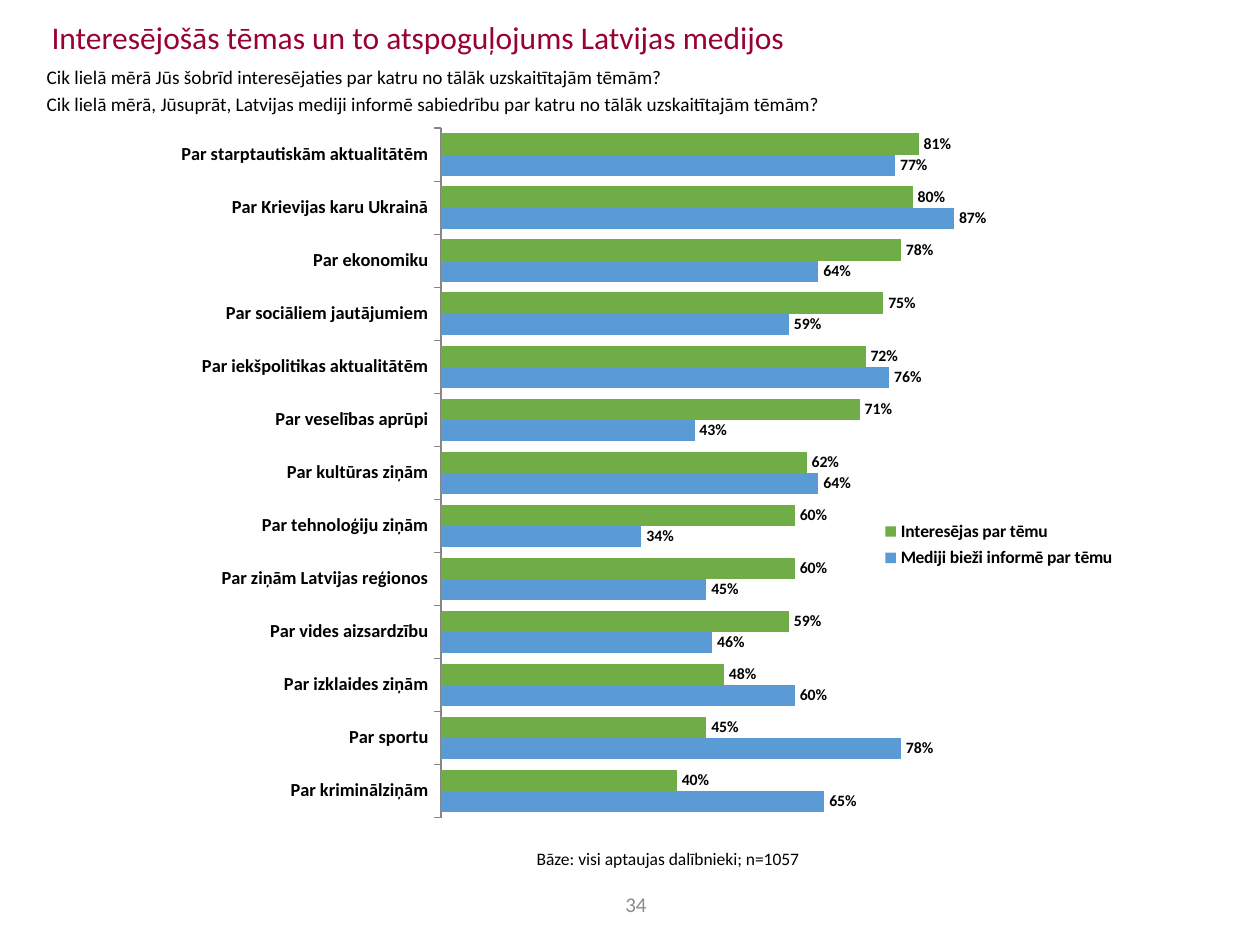
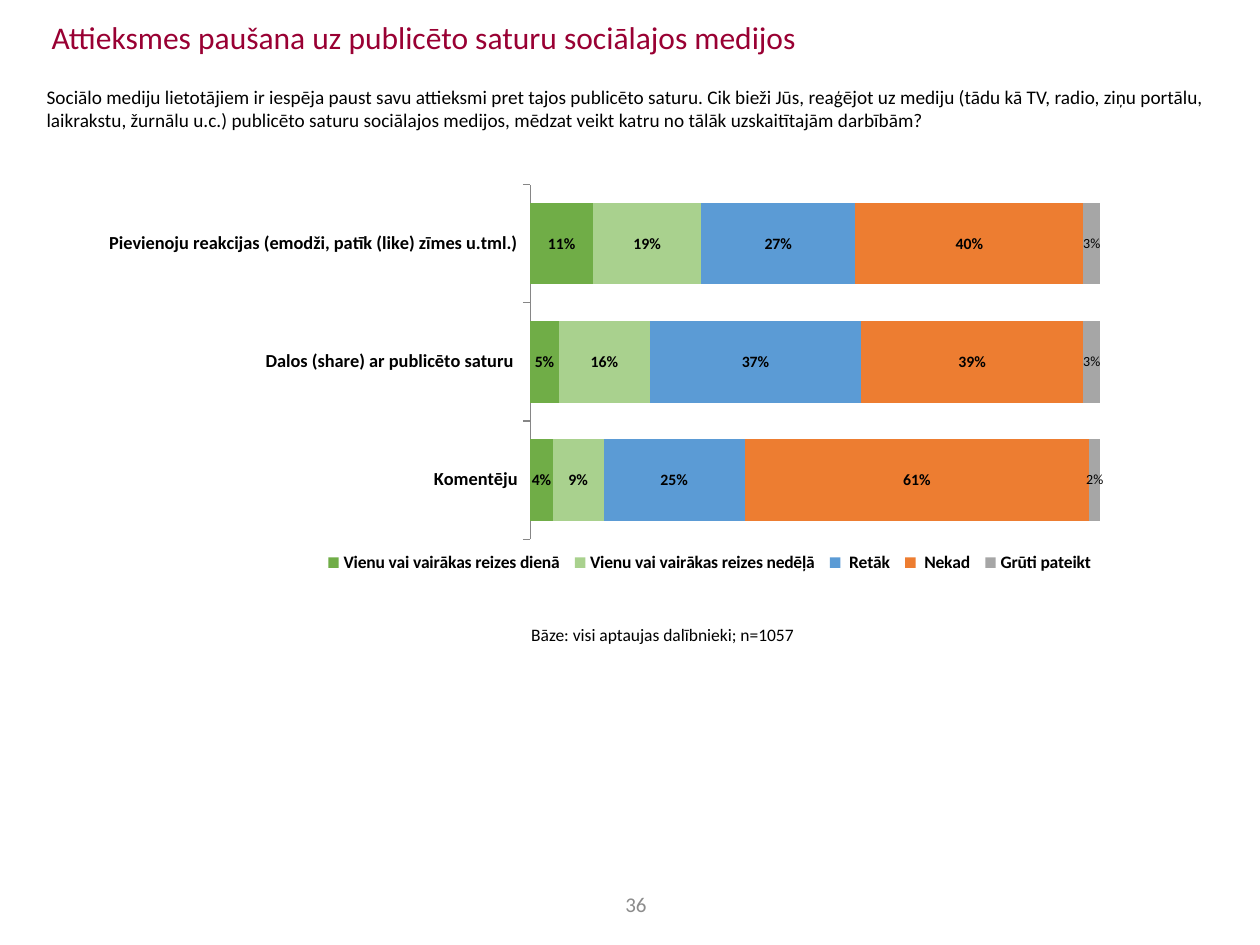
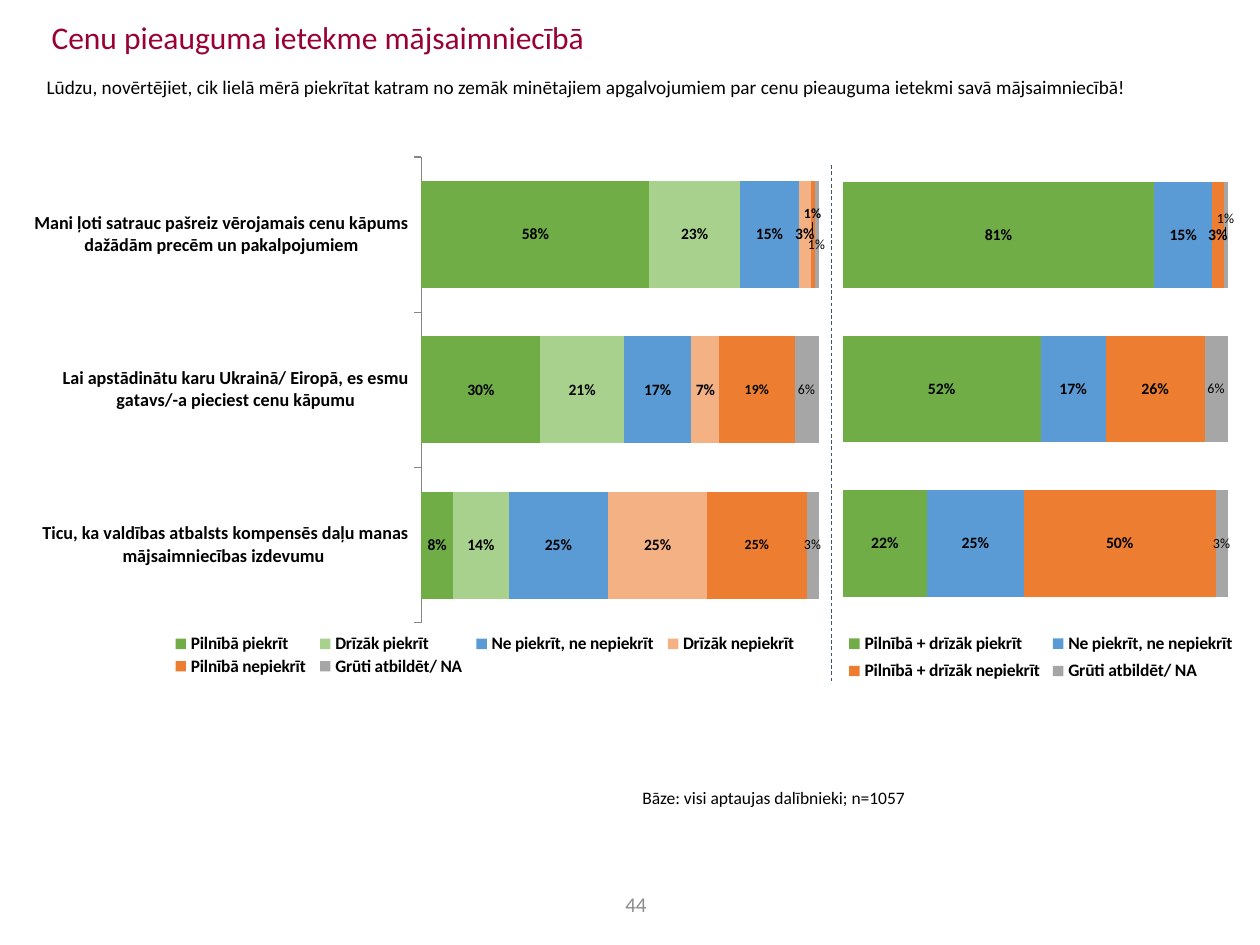
import pptx
import pptx.chart.data
import pptx.dml.color
import pptx.enum.chart
import pptx.enum.dml
import pptx.enum.shapes
import pptx.enum.text
import pptx.oxml
import pptx.oxml.ns
import pptx.util

Cm, Pt = pptx.util.Cm, pptx.util.Pt
Anchor = pptx.enum.text.MSO_ANCHOR
ChartType = pptx.enum.chart.XL_CHART_TYPE
LabelPosition = pptx.enum.chart.XL_LABEL_POSITION

FONT = "Calibri"
BLACK, CRIMSON, GREY_TEXT, AXIS, SLATE = "000000", "990033", "8C8C8C", "868686", "44546A"
GREEN, LIGHT_GREEN, BLUE = "70AD47", "A9D18E", "5B9BD5"
ORANGE, LIGHT_ORANGE, GREY = "ED7D31", "F4B183", "A6A6A6"
BASE = "Bāze: visi aptaujas dalībnieki; n=1057"

# Places are left, top, width, height in cm; plot and legend are shares of the chart.
# Series: name, colour, values in percent, then options for its labels.
SMALL = {"size": 8, "bold": False}

TOPICS = {
    "place": (2.57, 2.57, 20.19, 14.07),
    "plot": (0.313, 0, 0.589, 0.989),
    "legend": (0.745, 0.555, 0.25, 0.085),
    "stacked": False,
    "categories": [
        "Par kriminālziņām", "Par sportu", "Par izklaides ziņām", "Par vides aizsardzību",
        "Par ziņām Latvijas reģionos", "Par tehnoloģiju ziņām", "Par kultūras ziņām",
        "Par veselības aprūpi", "Par iekšpolitikas aktualitātēm", "Par sociāliem jautājumiem",
        "Par ekonomiku", "Par Krievijas karu Ukrainā", "Par starptautiskām aktualitātēm",
    ],
    "series": [
        ("Mediji bieži informē par tēmu", BLUE,
         [65, 78, 60, 46, 45, 34, 64, 43, 76, 59, 64, 87, 77], {}),
        ("Interesējas par tēmu", GREEN,
         [40, 45, 48, 59, 60, 60, 62, 71, 72, 75, 78, 80, 81], {}),
    ],
}
REACTIONS = {
    "place": (1.98, 3.71, 20.27, 8.1),
    "plot": (0.431, 0, 0.569, 0.884),
    "legend": (0.22, 0.91, 0.78, 0.065),
    "categories": [
        "Komentēju",
        "Dalos (share) ar publicēto saturu ",
        "Pievienoju reakcijas (emodži, patīk (like) zīmes u.tml.)",
    ],
    "series": [
        ("Vienu vai vairākas reizes dienā", GREEN, [4, 5, 11], {}),
        ("Vienu vai vairākas reizes nedēļā", LIGHT_GREEN, [9, 16, 19], {}),
        (" Retāk", BLUE, [25, 37, 27], {}),
        (" Nekad", ORANGE, [61, 39, 40], {}),
        ("Grūti pateikt", GREY, [2, 3, 3], SMALL),
    ],
}
PRICES = {
    "place": (0.69, 3.15, 15.95, 10.64),
    "plot": (0.491, 0, 0.509, 0.884),
    "legend": (0.165, 0.9, 0.815, 0.09),
    "categories": [
        "Ticu, ka valdības atbalsts kompensēs daļu manas mājsaimniecības izdevumu ",
        "Lai apstādinātu karu Ukrainā/ Eiropā, es esmu gatavs/-a pieciest cenu kāpumu",
        "Mani ļoti satrauc pašreiz vērojamais cenu kāpums dažādām precēm un pakalpojumiem",
    ],
    "series": [
        ("Pilnībā piekrīt", GREEN, [8, 30, 58], {}),
        ("Drīzāk piekrīt", LIGHT_GREEN, [14, 21, 23], {}),
        ("Ne piekrīt, ne nepiekrīt", BLUE, [25, 17, 15], {}),
        ("Drīzāk nepiekrīt", LIGHT_ORANGE, [25, 7, 3], {}),
        ("Pilnībā nepiekrīt", ORANGE, [25, 19, 1], {"size": 8, "last_shift": -0.04}),
        ("Grūti atbildēt/ NA", GREY, [3, 6, 1], {**SMALL, "last_shift": 0.02}),
    ],
}
PRICE_TOTALS = {
    "place": (16.89, 3.18, 8.1, 10.92),
    "plot": (0.012, 0, 0.958, 0.855),
    "legend": (0.01, 0.865, 0.99, 0.115),
    "show_categories": False,
    "categories": ["1", "2", "3"],
    "series": [
        ("Pilnībā + drīzāk piekrīt", GREEN, [22, 52, 81], {}),
        ("Ne piekrīt, ne nepiekrīt", BLUE, [25, 17, 15], {}),
        ("Pilnībā + drīzāk nepiekrīt", ORANGE, [50, 26, 3], {}),
        ("Grūti atbildēt/ NA", GREY, [3, 6, 1], {**SMALL, "last_shift": -0.03}),
    ],
}
PAGES = [
    {
        "number": "34",
        "title": "Interesējošās tēmas un to atspoguļojums Latvijas medijos",
        "question": "Cik lielā mērā Jūs šobrīd interesējaties par katru no tālāk uzskaitītajām tēmām?\n"
                    "Cik lielā mērā, Jūsuprāt, Latvijas mediji informē sabiedrību par katru "
                    "no tālāk uzskaitītajām tēmām?",
        "question_top": 1.19,
        "base_at": (10.57, 16.97),
        "charts": [TOPICS],
    },
    {
        "number": "36",
        "title": "Attieksmes paušana uz publicēto saturu sociālajos medijos",
        "question": "Sociālo mediju lietotājiem ir iespēja paust savu attieksmi pret tajos publicēto "
                    "saturu. Cik bieži Jūs, reaģējot uz mediju (tādu kā TV, radio, ziņu portālu, "
                    "laikrakstu, žurnālu u.c.) publicēto saturu sociālajos medijos, mēdzat veikt "
                    "katru no tālāk uzskaitītajām darbībām?",
        "question_top": 1.6,
        "base_at": (10.46, 12.45),
        "charts": [REACTIONS],
    },
    {
        "number": "44",
        "title": "Cenu pieauguma ietekme mājsaimniecībā",
        "question": "Lūdzu, novērtējiet, cik lielā mērā piekrītat katram no zemāk minētajiem "
                    "apgalvojumiem par cenu pieauguma ietekmi savā mājsaimniecībā!",
        "question_top": 1.4,
        "base_at": (12.7, 15.75),
        "charts": [PRICES, PRICE_TOTALS],
        "divider": (16.76, 3.33, 16.76, 13.77),
    },
]


def color(value):
    return pptx.dml.color.RGBColor.from_string(value)


def set_font(font, size, bold=False, fill=BLACK):
    font.name, font.size, font.bold = FONT, Pt(size), bold
    font.color.rgb = color(fill)


def add_text(page, text, place, size, fill=BLACK, anchor=Anchor.TOP, align=None, wrap=True):
    """Add a text box with one paragraph for each line of the text."""
    frame = page.shapes.add_textbox(*map(Cm, place)).text_frame
    frame.word_wrap = wrap
    frame.vertical_anchor = anchor
    frame.text = text
    for index, para in enumerate(frame.paragraphs):
        para.alignment = align
        para.space_before = Pt(2.2 if index else 0)
        set_font(para.font, size, fill=fill)


def add_layout(parent, index, **values):
    """Insert a manual layout as the child at the index."""
    for old in parent.findall(pptx.oxml.ns.qn("c:layout")):
        parent.remove(old)
    items = "".join(f'<c:{name} val="{value}"/>' for name, value in values.items())
    parent.insert(index, pptx.oxml.parse_xml(
        f'<c:layout {pptx.oxml.ns.nsdecls("c")}><c:manualLayout>{items}'
        "</c:manualLayout></c:layout>"))


def place_inside_chart(parent, index, area, **target):
    left, top, width, height = area
    add_layout(parent, index, **target, xMode="edge", yMode="edge",
               x=left, y=top, w=width, h=height)


def format_series(series, fill, position, size=9, bold=True, last_shift=None):
    """Colour a series and label it; last_shift moves the last label up or down."""
    series.format.fill.solid()
    series.format.fill.fore_color.rgb = color(fill)
    series.invert_if_negative = False
    labels = series.data_labels
    labels.show_value = True
    labels.number_format, labels.number_format_is_linked = "0%", False
    labels.position = position
    set_font(labels.font, size, bold)
    if last_shift is not None:
        label = series.points[len(series.values) - 1].data_label
        set_font(label.font, size, bold)
        label.position = position
        add_layout(labels._element.find(pptx.oxml.ns.qn("c:dLbl")), 1, x=0, y=last_shift)


def format_axes(chart, show_categories):
    values, categories = chart.value_axis, chart.category_axis
    values.visible = False
    values.has_major_gridlines = False
    values.minimum_scale, values.maximum_scale = 0, 1
    categories.visible = show_categories
    categories.has_major_gridlines = False
    if show_categories:
        categories.major_tick_mark = pptx.enum.chart.XL_TICK_MARK.OUTSIDE
        categories.format.line.color.rgb = color(AXIS)
        categories.format.line.width = Pt(0.75)
        set_font(categories.tick_labels.font, 10.5, True)


def add_bar_chart(page, place, plot, legend, categories, series,
                  stacked=True, show_categories=True):
    data = pptx.chart.data.CategoryChartData(number_format="0%")
    data.categories = categories
    for name, _, percents, _ in series:
        data.add_series(name, [percent / 100 for percent in percents])
    kind = ChartType.BAR_STACKED_100 if stacked else ChartType.BAR_CLUSTERED
    chart = page.shapes.add_chart(kind, *map(Cm, place), data).chart
    chart.has_title = False
    set_font(chart.font, 18)
    format_axes(chart, show_categories)

    bars = chart.plots[0]
    bars.vary_by_categories = False
    bars.gap_width = 45 if stacked else 50
    bars.overlap = 100 if stacked else 0
    position = LabelPosition.CENTER if stacked else LabelPosition.OUTSIDE_END
    for item, (_, fill, _, options) in zip(bars.series, series):
        format_series(item, fill, position, **options)

    chart.has_legend = True
    chart.legend.position = pptx.enum.chart.XL_LEGEND_POSITION.RIGHT
    chart.legend.include_in_layout = False
    set_font(chart.legend.font, 10, True)
    place_inside_chart(chart.legend._element, 1, legend)
    place_inside_chart(chart._chartSpace.chart.plotArea, 0, plot, layoutTarget="inner")


def add_divider(page, ends):
    line = page.shapes.add_connector(pptx.enum.shapes.MSO_CONNECTOR.STRAIGHT, *map(Cm, ends))
    line.line.color.rgb = color(SLATE)
    line.line.width = Pt(0.5)
    line.line.dash_style = pptx.enum.dml.MSO_LINE.DASH
    line._element.spPr.append(
        pptx.oxml.parse_xml(f'<a:effectLst {pptx.oxml.ns.nsdecls("a")}/>'))


def add_page(deck, content):
    page = deck.slides.add_slide(deck.slide_layouts[6])
    add_text(page, content["title"], (0.79, 0.18, 23.8, 1.12), 18, CRIMSON, Anchor.MIDDLE)
    add_text(page, content["question"], (0.69, content["question_top"], 24.28, 0.66), 11)
    for chart in content["charts"]:
        add_bar_chart(page, **chart)
    if "divider" in content:
        add_divider(page, content["divider"])
    add_text(page, BASE, (*content["base_at"], 5.87, 0.69), 10, wrap=False)
    add_text(page, content["number"], (12.12, 17.88, 1.4, 0.71), 12, GREY_TEXT,
             Anchor.MIDDLE, pptx.enum.text.PP_ALIGN.CENTER)


def main():
    deck = pptx.Presentation()
    deck.slide_width, deck.slide_height = Cm(25.4), Cm(19.05)
    for content in PAGES:
        add_page(deck, content)
    deck.save("out.pptx")


if __name__ == "__main__":
    main()
